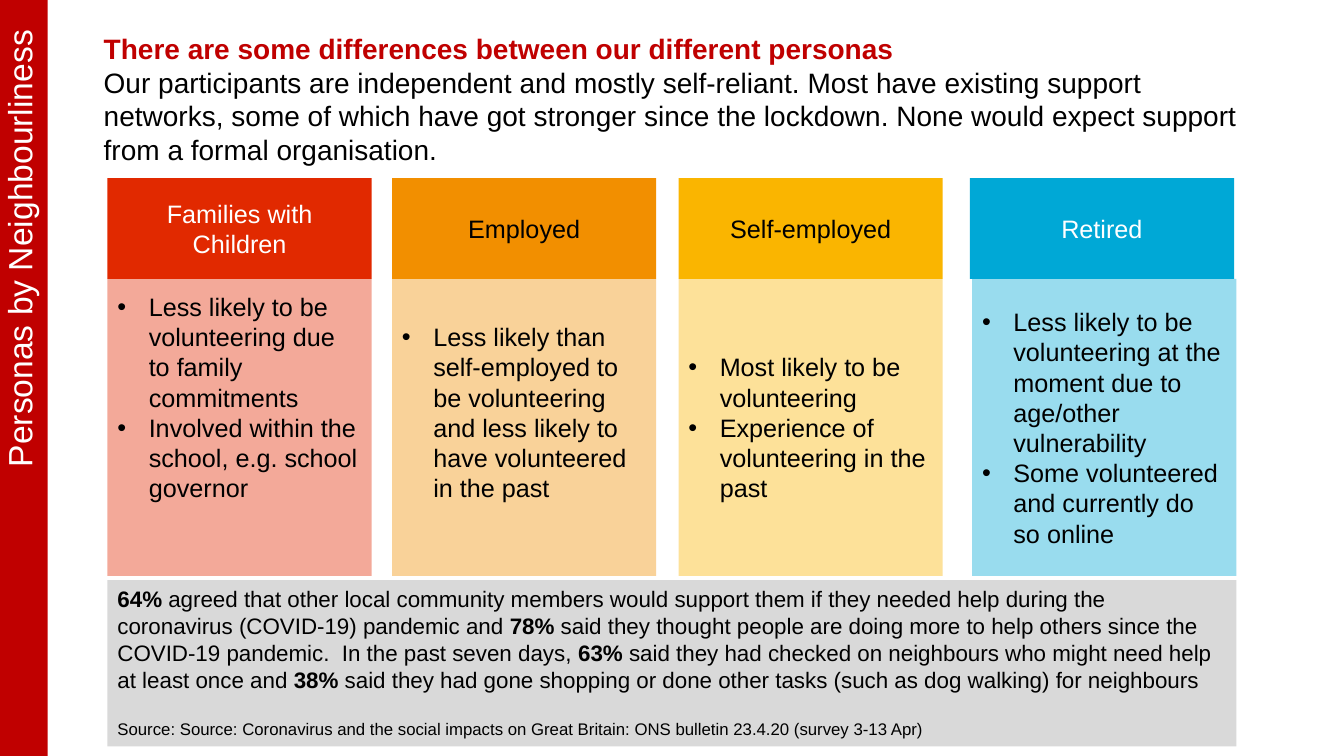
from dataclasses import dataclass

from lxml.etree import SubElement
from pptx import Presentation
from pptx.dml.color import RGBColor
from pptx.enum.shapes import MSO_SHAPE
from pptx.enum.text import MSO_ANCHOR, MSO_AUTO_SIZE, PP_ALIGN
from pptx.oxml.ns import qn
from pptx.util import Cm, Pt


@dataclass(frozen=True)
class Theme:
    """Colours, font and type sizes of the slide."""
    font: str = "Arial"
    red: str = "C00000"
    grey: str = "D9D9D9"
    white: str = "FFFFFF"
    black: str = "000000"
    label: int = 24
    lead: int = 20
    body: int = 18
    fact: int = 16
    note: int = 12


THEME = Theme()
LEFT, WIDE = 2.71, 28.45
HEAD, LINE = 2.54, 0.76

CARDS = [
    (LEFT, 0, "E12900", THEME.white, "Families with Children", 2,
     ["Less likely to be volunteering due to family commitments",
      "Involved within the school, e.g. school governor"]),
    (9.88, 0, "F28F00", THEME.black, "Employed", 1,
     ["Less likely than self-employed to be volunteering and less likely "
      "to have volunteered in the past"]),
    (17.1, 0, "FAB500", THEME.black, "Self-employed", 0,
     ["Most likely to be volunteering",
      "Experience of volunteering in the past"]),
    (24.44, 0.06, "00A8D6", THEME.white, "Retired", 0,
     ["Less likely to be volunteering at the moment due to age/other "
      "vulnerability",
      "Some volunteered and currently do so online"]),
]

FACTS = [
    ("64% ", True),
    ("agreed that other local community members would support them if they "
     "needed help during the coronavirus (COVID-19) pandemic and ", False),
    ("78% ", True),
    ("said they thought people are doing more to help others since the "
     "COVID-19 pandemic.  In the past seven days, ", False),
    ("63%", True),
    (" said they had checked on neighbours who might need help at least once "
     "and ", False),
    ("38%", True),
    (" said they had gone shopping or done other tasks (such as dog walking) "
     "for neighbours", False),
]
SOURCE = ("Source: Source: Coronavirus and the social impacts on Great Britain: "
          "ONS bulletin 23.4.20 (survey 3-13 Apr)")
LEAD = "There are some differences between our different personas"
INTRO = ("Our participants are independent and mostly self-reliant. Most have "
         "existing support networks, some of which have got stronger since the "
         "lockdown. None would expect support from a formal organisation.")


def style(para, size, color, bold=False, align=PP_ALIGN.LEFT):
    """Format a paragraph and all its runs."""
    para.alignment = align
    for run in para.runs:
        font = run.font
        font.name, font.size, font.bold = THEME.font, Pt(size), bold
        font.color.rgb = RGBColor.from_string(color)


def panel(slide, box, color, anchor=MSO_ANCHOR.MIDDLE):
    """Add a flat rectangle and return it."""
    shape = slide.shapes.add_shape(MSO_SHAPE.RECTANGLE, *map(Cm, box))
    shape.shadow.inherit = False
    shape.line.fill.background()
    shape.fill.solid()
    shape.fill.fore_color.rgb = RGBColor.from_string(color)
    shape.text_frame.word_wrap = True
    shape.text_frame.vertical_anchor = anchor
    return shape


def fade(shape, share):
    """Make the fill of a shape partly opaque, in percent."""
    for color in shape.element.xpath("./p:spPr/a:solidFill/a:srgbClr"):
        SubElement(color, qn("a:alpha")).set("val", str(share * 1000))


def bullet(para):
    """Give a paragraph a hanging round bullet."""
    props = para._p.get_or_add_pPr()
    props.set("marL", str(Cm(0.79)))
    props.set("indent", str(-Cm(0.79)))
    SubElement(props, qn("a:buFont")).set("typeface", THEME.font)
    SubElement(props, qn("a:buChar")).set("char", "•")


def side(slide, box):
    """Add the red bar with its label reading upwards."""
    bar = panel(slide, box, THEME.red)
    frame = bar.text_frame
    frame.text = "Personas by Neighbourliness"
    frame.margin_left, frame.margin_top = Cm(0.18), Cm(0.76)
    frame.margin_right, frame.margin_bottom = Cm(0.3), Cm(0)
    for props in bar.element.xpath("./p:txBody/a:bodyPr"):
        props.set("vert", "vert270")
    para = frame.paragraphs[0]
    para.line_spacing = 0.9
    style(para, THEME.label, THEME.white, align=PP_ALIGN.RIGHT)


def intro(slide, box):
    """Fill the title with the red lead line and the text below it."""
    title = slide.shapes.title
    title.left, title.top, title.width, title.height = map(Cm, box)
    frame = title.text_frame
    frame.auto_size, frame.word_wrap = MSO_AUTO_SIZE.NONE, True
    frame.vertical_anchor = MSO_ANCHOR.TOP
    frame.text = f"{LEAD}\n{INTRO}"
    first, rest = frame.paragraphs
    style(first, THEME.lead, THEME.red, True)
    style(rest, THEME.lead, THEME.black)


def card(slide, box, shift, color, ink, name, lift, points):
    """Add one persona: a header with its pale list below."""
    left, top, width, height = box
    body = panel(slide, (left + shift, top + HEAD, width, height - HEAD), color)
    fade(body, 40)
    frame = body.text_frame
    frame.margin_bottom = Cm(0.13 + lift * LINE)
    frame.text = "\n".join(points)
    for para in frame.paragraphs:
        style(para, THEME.body, THEME.black)
        bullet(para)
    head = panel(slide, (left, top, width, HEAD), color)
    head.text_frame.text = name
    style(head.text_frame.paragraphs[0], THEME.body, ink, align=PP_ALIGN.CENTER)


def facts(slide, box):
    """Add the grey survey panel with its source line."""
    frame = panel(slide, box, THEME.grey, MSO_ANCHOR.TOP).text_frame
    para = frame.paragraphs[0]
    for text, _ in FACTS:
        para.add_run().text = text
    style(para, THEME.fact, THEME.black)
    for run, (_, bold) in zip(para.runs, FACTS):
        run.font.bold = bold
    note = frame.add_paragraph()
    note.text = SOURCE
    note.space_before = Pt(19)
    style(note, THEME.note, THEME.black)


def main():
    """Build and save the slide."""
    deck = Presentation()
    deck.slide_width, deck.slide_height = Cm(33.87), Cm(19.05)
    slide = deck.slides.add_slide(deck.slide_layouts.get_by_name("Title Only"))
    side(slide, (0, 0, 1.2, 19.05))
    intro(slide, (2.36, 0.67, 29.31, 3.68))
    for left, *parts in CARDS:
        card(slide, (left, 4.49, 6.66, 10.02), *parts)
    facts(slide, (LEFT, 14.62, WIDE, 4.19))
    deck.save("out.pptx")


if __name__ == "__main__":
    main()
